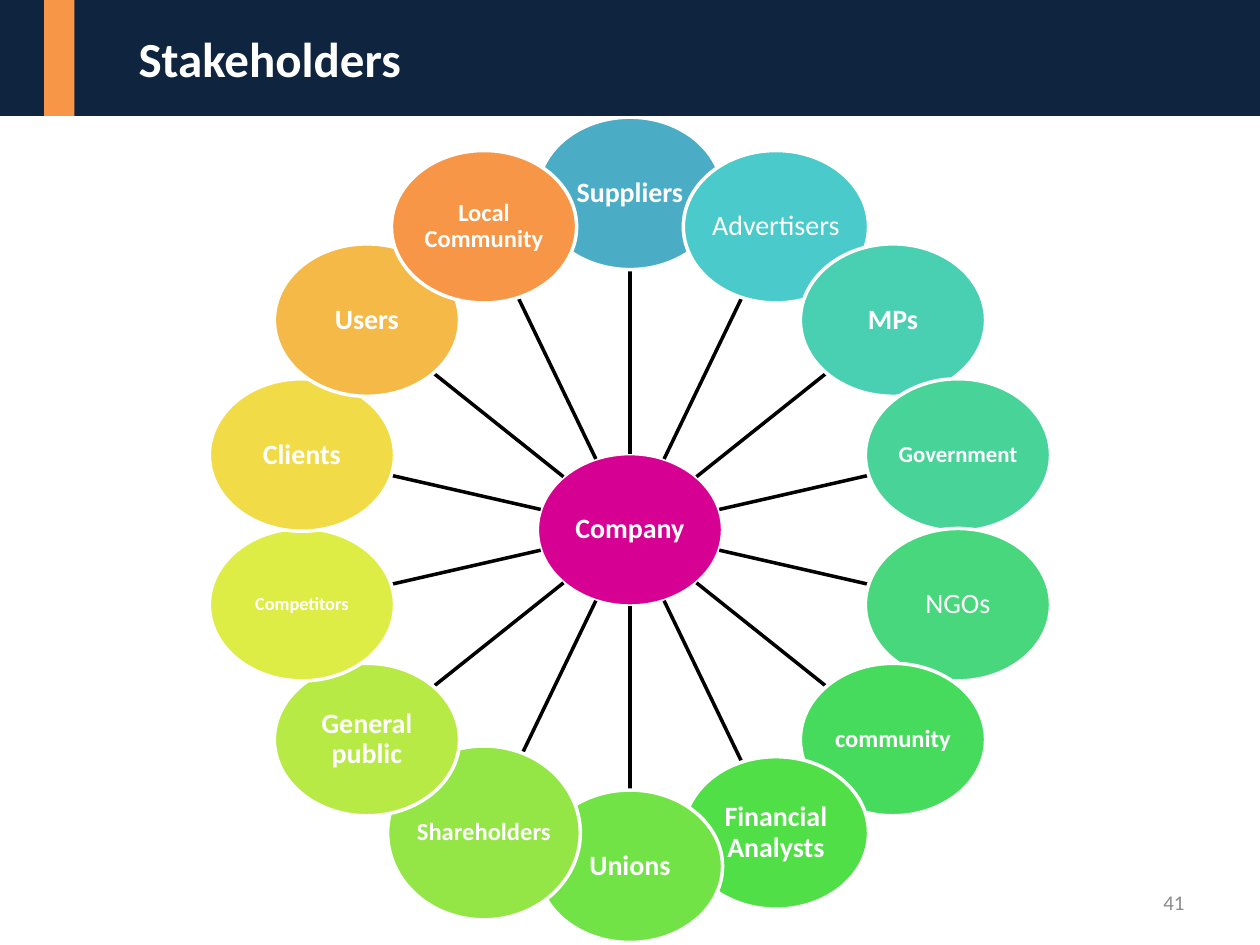
from collections import namedtuple
from math import cos, hypot, pi, sin

from lxml.etree import SubElement
from pptx import Presentation
from pptx.dml.color import RGBColor
from pptx.enum.shapes import MSO_CONNECTOR, MSO_SHAPE
from pptx.enum.text import MSO_ANCHOR, PP_ALIGN
from pptx.oxml.ns import qn
from pptx.util import Inches, Pt

SLIDE_WIDTH, SLIDE_HEIGHT = 10, 7.5
NODE_SIZE = (1.47, 1.21)
LARGE_NODE_SIZE = (1.53, 1.38)

Box = namedtuple("Box", "left top width height")
Stakeholder = namedtuple("Stakeholder", "name fill size bold node_size",
                         defaults=(16, True, NODE_SIZE))

STAKEHOLDERS = [
    Stakeholder("Suppliers", "4BACC6"),
    Stakeholder("Advertisers", "4ACACA", bold=False),
    Stakeholder("MPs", "49CFB2"),
    Stakeholder("Government", "48D398", size=13),
    Stakeholder("NGOs", "48D77C", bold=False),
    Stakeholder("community", "47DB5D", size=14),
    Stakeholder("Financial Analysts", "50DF47"),
    Stakeholder("Unions", "71E346"),
    Stakeholder("Shareholders", "94E646", size=14, node_size=LARGE_NODE_SIZE),
    Stakeholder("General public", "B8EA46"),
    Stakeholder("Competitors", "DEED46", size=10.5),
    Stakeholder("Clients", "F1DB46"),
    Stakeholder("Users", "F4B946"),
    Stakeholder("Local Community", "F79646", size=14),
]


def color(hex_value):
    return RGBColor.from_string(hex_value)


def share(left, top, width, height):
    return Box(left * SLIDE_WIDTH, top * SLIDE_HEIGHT,
               width * SLIDE_WIDTH, height * SLIDE_HEIGHT)


def write(shape, text, size=16, bold=False, fill="FFFFFF", align=PP_ALIGN.CENTER,
          side_margins=(0.1, 0.1), end_margin=0.05, line_spacing=1.0):
    frame = shape.text_frame
    frame.word_wrap = True
    frame.vertical_anchor = MSO_ANCHOR.MIDDLE
    frame.margin_left, frame.margin_right = map(Inches, side_margins)
    frame.margin_top = frame.margin_bottom = Inches(end_margin)
    paragraph = frame.paragraphs[0]
    paragraph.alignment = align
    paragraph.line_spacing = line_spacing
    run = paragraph.add_run()
    run.text = text
    run.font.name = "Calibri"
    run.font.size = Pt(size)
    run.font.bold = bold
    run.font.color.rgb = color(fill)


def add_filled(slide, preset, box, fill, outline=None):
    shape = slide.shapes.add_shape(preset, *map(Inches, box))
    shape.shadow.inherit = False
    shape.fill.solid()
    shape.fill.fore_color.rgb = color(fill)
    if outline:
        shape.line.color.rgb = color(outline)
        shape.line.width = Pt(2)
    else:
        shape.line.fill.background()
    return shape


def add_header(slide, box):
    bar = add_filled(slide, MSO_SHAPE.RECTANGLE, box, "0F243E")
    write(bar, "Stakeholders", size=28, bold=True, align=PP_ALIGN.LEFT,
          side_margins=(0.11 * box.width, 0.1))
    accent = Box(box.left + 0.035 * box.width, box.top, 0.024 * box.width, box.height)
    add_filled(slide, MSO_SHAPE.RECTANGLE, accent, "F79646")


def add_node(slide, center_x, center_y, stakeholder):
    width, height = stakeholder.node_size
    box = Box(center_x - width / 2, center_y - height / 2, width, height)
    node = add_filled(slide, MSO_SHAPE.OVAL, box, stakeholder.fill, "FFFFFF")
    write(node, stakeholder.name, size=stakeholder.size, bold=stakeholder.bold,
          side_margins=(0, 0), end_margin=0, line_spacing=0.9)


def add_spoke(slide, start, end):
    spoke = slide.shapes.add_connector(MSO_CONNECTOR.STRAIGHT, *map(Inches, start + end))
    spoke.line.color.rgb = color("000000")
    spoke.line.width = Pt(2)
    SubElement(spoke._element.spPr, qn("a:effectLst"))


def edge_distance(node_size, across, down):
    width, height = node_size
    return 0.5 / hypot(across / width, down / height)


def add_wheel(slide, box, hub, stakeholders):
    center_x = box.left + box.width / 2
    center_y = box.top + box.height / 2
    radius = (box.height - NODE_SIZE[1]) / 2
    add_node(slide, center_x, center_y, hub)
    for index, stakeholder in enumerate(stakeholders):
        angle = 2 * pi * index / len(stakeholders)
        across, down = sin(angle), -cos(angle)

        def point(distance):
            return center_x + distance * across, center_y + distance * down

        inner = edge_distance(hub.node_size, across, down)
        outer = radius - edge_distance(stakeholder.node_size, across, down)
        add_spoke(slide, point(inner), point(outer))
        add_node(slide, *point(radius), stakeholder)


def add_page_number(slide, box, number):
    text_box = slide.shapes.add_textbox(*map(Inches, box))
    write(text_box, number, size=12, fill="8C8C8C", align=PP_ALIGN.RIGHT)


def main():
    presentation = Presentation()
    presentation.slide_width = Inches(SLIDE_WIDTH)
    presentation.slide_height = Inches(SLIDE_HEIGHT)
    slide = presentation.slides.add_slide(presentation.slide_layouts[6])
    wheel_box = Box(1.6, 0.93, 6.8, 6.55)
    add_wheel(slide, wheel_box, Stakeholder("Company", "D60093"), STAKEHOLDERS)
    add_header(slide, Box(0, 0, SLIDE_WIDTH, 0.92))
    add_page_number(slide, share(0.72, 0.93, 0.23, 0.05), "41")
    presentation.save("out.pptx")


if __name__ == "__main__":
    main()
